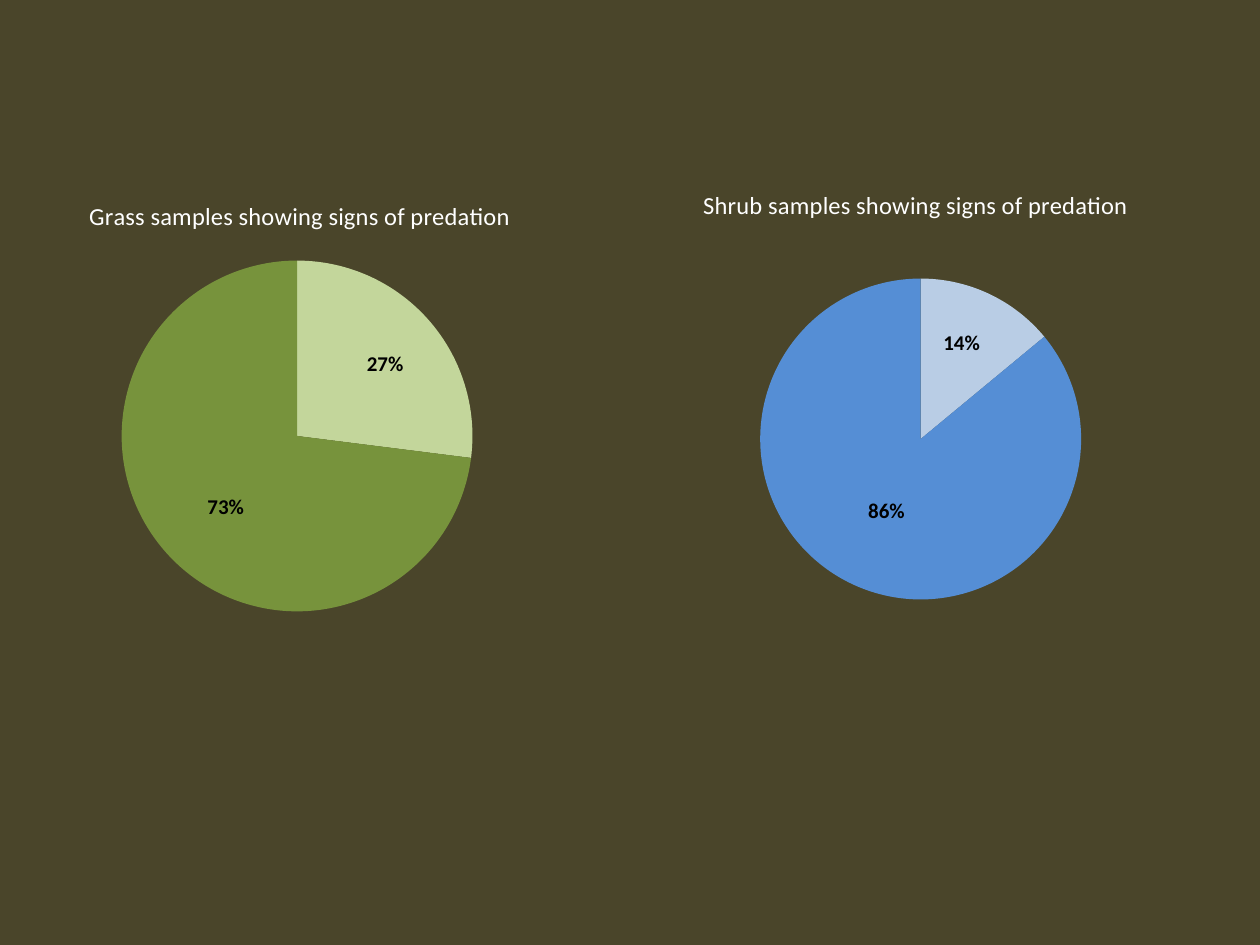
from lxml import etree
from pptx import Presentation
from pptx.chart.data import CategoryChartData
from pptx.dml.color import RGBColor
from pptx.enum.chart import XL_CHART_TYPE, XL_LABEL_POSITION
from pptx.oxml.ns import qn
from pptx.util import Inches, Pt

PIE = XL_CHART_TYPE.PIE
CENTER = XL_LABEL_POSITION.CENTER

BACKGROUND = "4A452A"
FONT = "Calibri"
TITLE_FORMAT = {"size": Pt(14), "bold": False, "name": FONT}
LABEL_FORMAT = {"size": Pt(12), "bold": True, "name": FONT}

# Layout values are shares of each chart's own size
PIES = [
    {
        "title": "Grass samples showing signs of predation",
        "box": (0.17, 1.42, 4.42, 3.58),
        "values": (27, 73),
        "colors": ("C3D69B", "77933C"),
        "plot": (0.18, 0.18, 0.63, 0.78),
        "title_at": None,
        "label_shifts": ((0.04, -0.03), (-0.01, 0.03)),
    },
    {
        "title": "Shrub samples showing signs of predation",
        "box": (4.57, 0.83, 5.42, 4.5),
        "values": (14, 86),
        "colors": ("B9CDE5", "558ED5"),
        "plot": (0.27, 0.2, 0.47, 0.78),
        "title_at": (0.18, 0.14),
        "label_shifts": ((0.01, -0.04), (0, 0)),
    },
]


def color(value):
    return RGBColor.from_string(value)


def style(font, formats, fill):
    for name, value in formats.items():
        setattr(font, name, value)
    font.color.rgb = color(fill)


def set_layout(parent, index, settings):
    """Give a chart part a manual layout, as child number index."""
    for old in parent.findall(qn("c:layout")):
        parent.remove(old)
    layout = etree.Element(qn("c:layout"))
    manual = etree.SubElement(layout, qn("c:manualLayout"))
    for tag, value in settings.items():
        etree.SubElement(manual, qn("c:" + tag)).set("val", str(value))
    parent.insert(index, layout)


def add_pie(page, pie):
    data = CategoryChartData()
    data.categories = ["1", "2"]
    data.add_series(pie["title"], pie["values"])
    box = [Inches(length) for length in pie["box"]]
    chart = page.shapes.add_chart(PIE, *box, data).chart
    chart.has_legend = False
    style(chart.font, {"size": Pt(10), "name": FONT}, "000000")

    # Title
    chart.has_title = True
    chart.chart_title.include_in_layout = False
    para = chart.chart_title.text_frame.paragraphs[0]
    span = para.add_run()
    span.text = pie["title"]
    style(span.font, TITLE_FORMAT, "FFFFFF")
    if pie["title_at"]:
        x, y = pie["title_at"]
        set_layout(chart.chart_title._element, 1,
                   {"xMode": "edge", "yMode": "edge", "x": x, "y": y})

    # Pie area
    x, y, w, h = pie["plot"]
    set_layout(chart._chartSpace.find(".//" + qn("c:plotArea")), 0,
               {"layoutTarget": "inner", "xMode": "edge", "yMode": "edge",
                "x": x, "y": y, "w": w, "h": h})

    # Percent labels
    series = chart.plots[0].series[0]
    labels = series.data_labels
    labels.show_value = False
    labels.show_percentage = True
    labels.position = CENTER
    style(labels.font, LABEL_FORMAT, "000000")

    # Slices, some with shifted labels
    for number, fill in enumerate(pie["colors"]):
        point = series.points[number]
        point.format.fill.solid()
        point.format.fill.fore_color.rgb = color(fill)
        x, y = pie["label_shifts"][number]
        if x or y:
            style(point.data_label.font, LABEL_FORMAT, "000000")
            point.data_label.position = CENTER
            label = chart._chartSpace.findall(".//" + qn("c:dLbl"))[-1]
            label.find(qn("c:showVal")).set("val", "0")
            label.find(qn("c:showPercent")).set("val", "1")
            set_layout(label, 1, {"x": x, "y": y})


def main():
    deck = Presentation()
    deck.slide_width, deck.slide_height = Inches(10), Inches(7.5)
    page = deck.slides.add_slide(deck.slide_layouts[6])
    page.background.fill.solid()
    page.background.fill.fore_color.rgb = color(BACKGROUND)
    for pie in PIES:
        add_pie(page, pie)
    deck.save("out.pptx")


if __name__ == "__main__":
    main()
